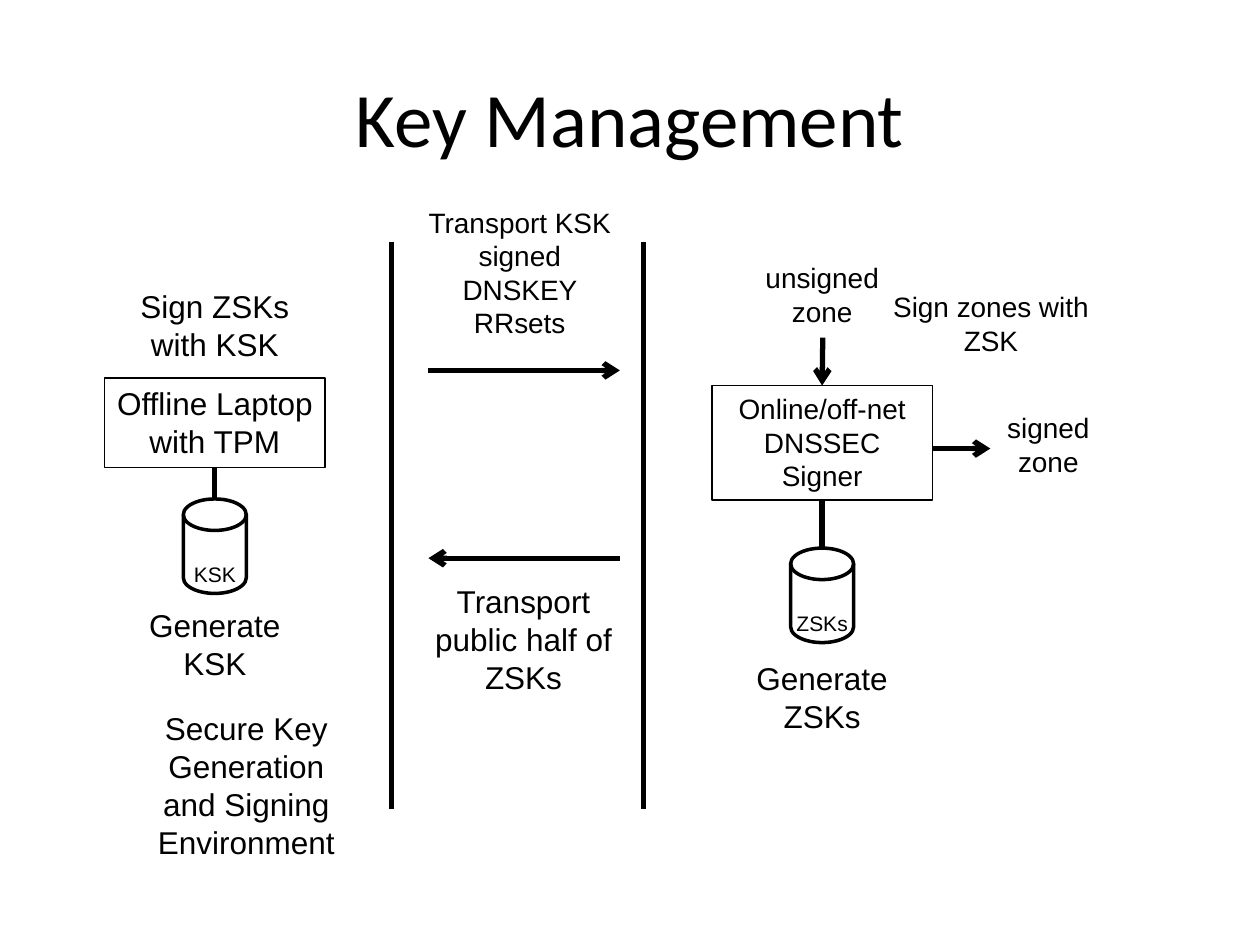
from pptx import Presentation
from pptx.dml.color import RGBColor
from pptx.enum.shapes import MSO_CONNECTOR, MSO_SHAPE
from pptx.enum.text import MSO_ANCHOR, PP_ALIGN
from pptx.oxml.ns import qn
from pptx.util import Inches, Pt
from lxml.etree import SubElement

INK = "000000"
COLUMN = 1.75
TITLE = ("Key Management", (0.5, 0.3, 9, 1.25))
LABELS = [
    ("Generate ZSKs", (5.65, 5.18, COLUMN, 0.4), 18),
    ("Transport public half of ZSKs", (3.28, 4.57, COLUMN, 1.01), 18),
    ("Generate KSK", (0.83, 4.76, COLUMN, 0.4), 18),
    ("Sign ZSKs with KSK", (0.83, 2.23, COLUMN, 0.71), 18),
    ("Transport KSK signed DNSKEY RRsets", (3.25, 1.58, COLUMN, 1.18), 16),
    ("Sign zones with ZSK", (6.99, 2.25, COLUMN, 0.64), 16),
    ("signed\nzone", (7.86, 3.21, 0.92, 0.64), 16),
    ("unsigned\nzone", (5.94, 2.02, 1.17, 0.64), 16),
    ("Secure Key Generation and Signing Environment", (1.08, 5.58, COLUMN, 1.31), 18),
]
STATIONS = [
    ("Offline Laptop with TPM", (0.83, 3, COLUMN, 0.71), 18, "KSK", 3.96),
    ("Online/off-net DNSSEC Signer", (5.65, 3.06, COLUMN, 0.91), 16, "ZSKs", 4.35),
]
STORE_WIDTH, STORE_HEIGHT = 0.5, 0.75
KEY_WIDTH, KEY_HEIGHT, KEY_DROP = 0.62, 0.3, 0.45
BORDERS = [3.11, 5.11]
BORDER_TOP, BORDER_BOTTOM = 1.92, 6.42
TRANSPORTS = [((3.4, 2.94), (4.92, 2.94)), ((4.92, 4.43), (3.4, 4.43))]
UNSIGNED_FLOW = ((6.53, 2.68), (6.53, 3.06))
SIGNED_FLOW = ((7.4, 3.56), (7.86, 3.56))


def color(value):
    return RGBColor.from_string(value)


def write(frame, text, size=18, font="Arial", anchor=MSO_ANCHOR.TOP):
    frame.word_wrap = True
    frame.vertical_anchor = anchor
    frame.text = text
    for paragraph in frame.paragraphs:
        paragraph.alignment = PP_ALIGN.CENTER
        paragraph.font.size = Pt(size)
        paragraph.font.name = font
        paragraph.font.color.rgb = color(INK)


def add_label(text, place, **style):
    label = slide.shapes.add_textbox(*map(Inches, place))
    write(label.text_frame, text, **style)


def add_outline(preset, place, weight):
    outline = slide.shapes.add_shape(preset, *map(Inches, place))
    outline.shadow.inherit = False
    outline.fill.background()
    outline.line.color.rgb = color(INK)
    outline.line.width = Pt(weight)
    return outline


def add_line(start, end, arrow=False):
    line = slide.shapes.add_connector(
        MSO_CONNECTOR.STRAIGHT, *map(Inches, (*start, *end)))
    line.line.color.rgb = color(INK)
    line.line.width = Pt(3)
    if arrow:
        SubElement(line.line._get_or_add_ln(), qn("a:tailEnd"), type="arrow")
    SubElement(line._element.spPr, qn("a:effectLst"))
    return line


def add_station(text, place, size, key, store_top):
    left, top, width, height = place
    middle = left + width / 2
    box = add_outline(MSO_SHAPE.RECTANGLE, place, 0.75)
    write(box.text_frame, text, size=size)
    add_outline(MSO_SHAPE.FLOWCHART_MAGNETIC_DISK,
                (middle - STORE_WIDTH / 2, store_top, STORE_WIDTH, STORE_HEIGHT), 2)
    add_label(key, (middle - KEY_WIDTH / 2, store_top + KEY_DROP, KEY_WIDTH, KEY_HEIGHT),
              size=12)
    add_line((middle, top + height), (middle, store_top)).begin_connect(box, 2)
    return box


deck = Presentation()
deck.slide_width, deck.slide_height = Inches(10), Inches(7.5)
slide = deck.slides.add_slide(deck.slide_layouts[6])

add_label(*TITLE, size=44, font="Calibri", anchor=MSO_ANCHOR.MIDDLE)
laptop, signer = [add_station(*station) for station in STATIONS]
for text, place, size in LABELS:
    add_label(text, place, size=size)
for x in BORDERS:
    add_line((x, BORDER_TOP), (x, BORDER_BOTTOM))
for start, end in [*TRANSPORTS, SIGNED_FLOW]:
    add_line(start, end, arrow=True)
add_line(*UNSIGNED_FLOW, arrow=True).end_connect(signer, 0)

deck.save("out.pptx")
